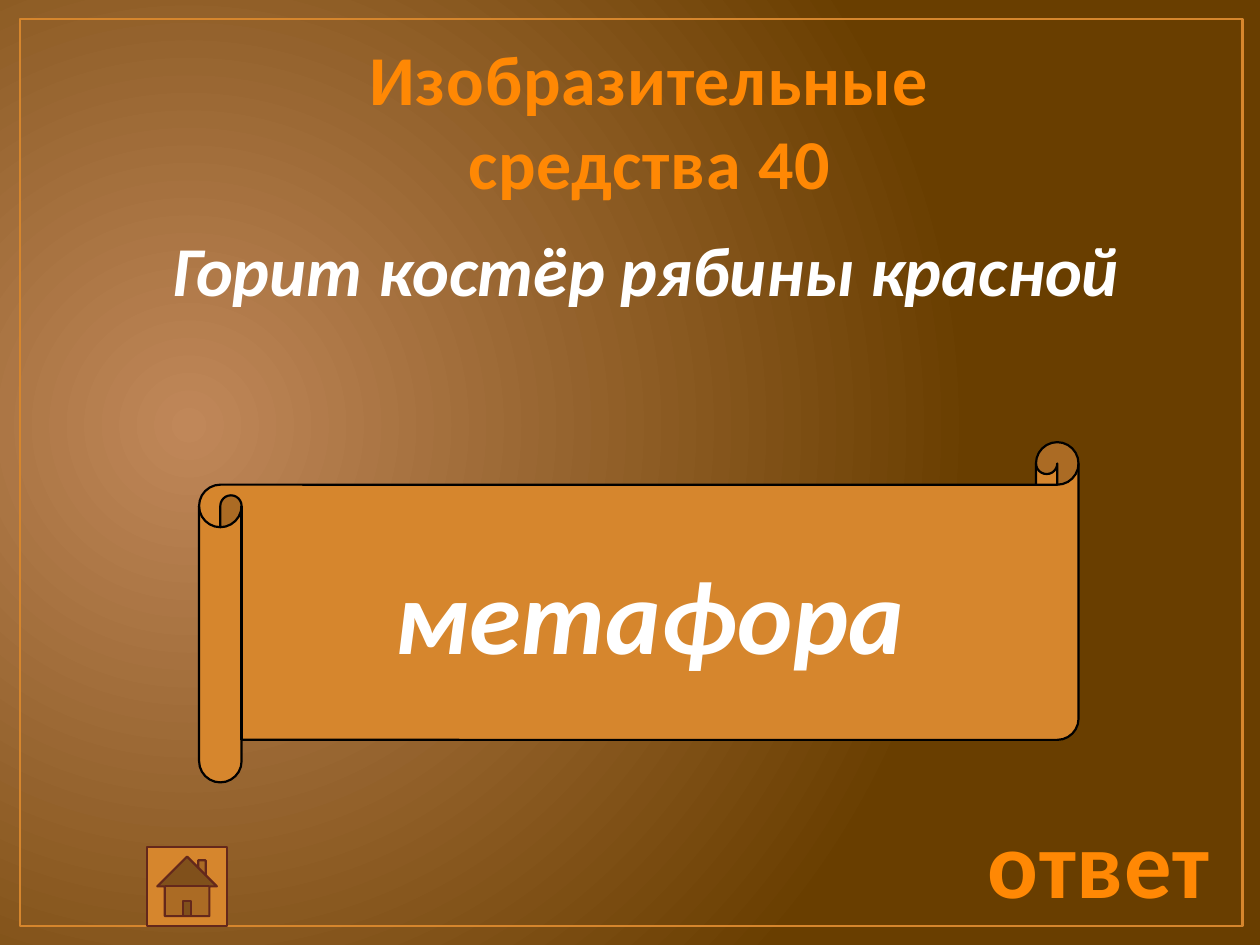
from lxml import etree
from pptx import Presentation
from pptx.dml.color import RGBColor
from pptx.enum.shapes import MSO_SHAPE
from pptx.enum.text import MSO_ANCHOR, MSO_AUTO_SIZE, PP_ALIGN
from pptx.oxml.ns import qn
from pptx.util import Inches, Pt

RECT = MSO_SHAPE.RECTANGLE
HOME = MSO_SHAPE.ACTION_BUTTON_HOME
SCROLL = MSO_SHAPE.HORIZONTAL_SCROLL
TOP, MIDDLE = MSO_ANCHOR.TOP, MSO_ANCHOR.MIDDLE
CENTER = PP_ALIGN.CENTER
NONE, GROW = MSO_AUTO_SIZE.NONE, MSO_AUTO_SIZE.SHAPE_TO_FIT_TEXT
FONT = "Calibri"

TAN = RGBColor(0xC0, 0x87, 0x59)
BROWN = RGBColor(0x69, 0x3E, 0x00)
GOLD = RGBColor(0xD6, 0x86, 0x2D)
RUST = RGBColor(0x64, 0x28, 0x1B)
BLACK = RGBColor(0, 0, 0)
WHITE = RGBColor(255, 255, 255)
BRIGHT = RGBColor(0xFF, 0x88, 0x04)
DARK = RGBColor(0xB7, 0x60, 0x00)


def blend(fill, first, last, start=0):
    """Give a fill a gradient of two colours."""
    fill.gradient()
    for stop, color, place in zip(fill.gradient_stops, (first, last), (start, 1)):
        stop.color.rgb = color
        stop.position = place


def paint(slide):
    """Lay a round gradient behind the slide."""
    blend(slide.background.fill, TAN, BROWN)
    grad = slide.element.find(".//" + qn("a:gradFill"))
    grad.remove(grad.find(qn("a:lin")))
    path = etree.SubElement(grad, qn("a:path"), path="circle")
    etree.SubElement(path, qn("a:fillToRect"),
                     l="15000", t="50000", r="85000", b="60000")


def place(shape, box):
    """Move a shape to a box in inches."""
    shape.left, shape.top, shape.width, shape.height = map(Inches, box)


def write(shape, text, size, anchor=TOP, fit=NONE, wrap=True):
    """Write one centred bold run and return it."""
    frame = shape.text_frame
    frame.word_wrap = wrap
    frame.auto_size = fit
    frame.vertical_anchor = anchor
    para = frame.paragraphs[0]
    para.alignment = CENTER
    run = para.add_run()
    run.text = text
    run.font.name = FONT
    run.font.size = Pt(size)
    run.font.bold = True
    return run


def glow(run):
    """Give a run the orange gradient and wider letter gaps."""
    blend(run.font.fill, BRIGHT, DARK, 0.25)
    run.font.fill.gradient_angle = 270
    run.font._element.set("spc", "50")


def slant(run):
    """Make a run white and italic."""
    run.font.italic = True
    run.font.color.rgb = WHITE


def draw(slide, kind, box, line, width, fill=None):
    """Add a preset shape with a flat fill and an outline."""
    shape = slide.shapes.add_shape(kind, *map(Inches, box))
    shape.shadow.inherit = False
    if fill is None:
        shape.fill.background()
    else:
        shape.fill.solid()
        shape.fill.fore_color.rgb = fill
    shape.line.color.rgb = line
    shape.line.width = Pt(width)
    return shape


def head(slide, box):
    """Fill the title."""
    title = slide.shapes.title
    place(title, box)
    glow(write(title, "Изобразительные средства 40", 40, fit=GROW))


def quote(slide, box):
    """Fill the body with the quoted line."""
    body = slide.placeholders[1]
    place(body, box)
    run = write(body, "Горит костёр рябины красной", 40)
    slant(run)
    props = body.text_frame.paragraphs[0]._p.get_or_add_pPr()
    props.set("marL", str(Inches(0.3)))
    props.set("indent", str(Inches(-0.3)))
    etree.SubElement(props, qn("a:buNone"))


def label(slide, box):
    """Add the answer label."""
    text = slide.shapes.add_textbox(*map(Inches, box))
    glow(write(text, "ответ", 54, fit=GROW, wrap=False))


def scroll(slide, box):
    """Add the scroll that holds the answer."""
    shape = draw(slide, SCROLL, box, BLACK, 1.25, GOLD)
    slant(write(shape, "метафора", 60, MIDDLE))


def main():
    """Build and save the quiz slide."""
    deck = Presentation()
    deck.slide_width, deck.slide_height = Inches(10), Inches(7.5)
    slide = deck.slides.add_slide(deck.slide_layouts[1])
    paint(slide)
    draw(slide, RECT, (0.16, 0.15, 9.7, 7.2), GOLD, 1.5)
    head(slide, (2.03, 0.23, 6.25, 1.45))
    draw(slide, HOME, (1.17, 6.72, 0.63, 0.63), RUST, 1.25, GOLD)
    quote(slide, (0.75, 1.75, 8.75, 3.42))
    label(slide, (7.73, 6.33, 1.98, 1.01))
    scroll(slide, (1.58, 3.51, 6.98, 2.7))
    deck.save("out.pptx")


if __name__ == "__main__":
    main()
